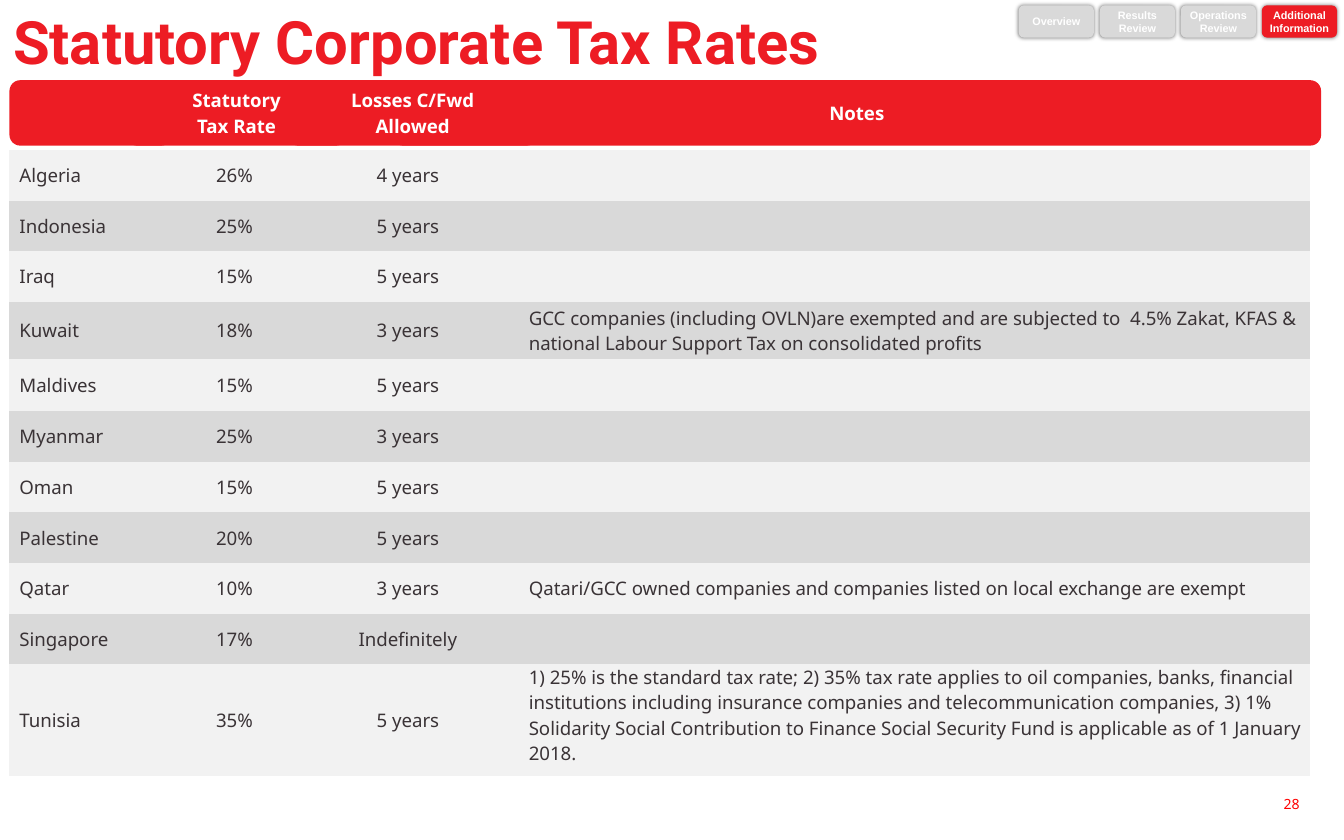
from dataclasses import dataclass
from typing import NamedTuple

import lxml.etree
import pptx
import pptx.dml.color
import pptx.enum.shapes
import pptx.enum.text
import pptx.oxml.ns
import pptx.util

RED = pptx.dml.color.RGBColor(0xED, 0x1C, 0x24)
PAGE_RED = pptx.dml.color.RGBColor(0xFF, 0x00, 0x00)
WHITE = pptx.dml.color.RGBColor(0xFF, 0xFF, 0xFF)
INK = pptx.dml.color.RGBColor(0x3A, 0x33, 0x36)
PALE = pptx.dml.color.RGBColor(0xF2, 0xF2, 0xF2)
GREY = pptx.dml.color.RGBColor(0xD9, 0xD9, 0xD9)
SHADOW = pptx.dml.color.RGBColor(0x80, 0x80, 0x80)

WIDTH = pptx.util.Inches(10)
HEIGHT = pptx.util.Inches(6.25)
GRID = 100
BODY_FONT = "Noto Sans"
PLAIN_STYLE = "{2D5ABB26-0587-4C30-8999-92F81FD0307C}"
ALIGN = pptx.enum.text.PP_ALIGN
ANCHOR = pptx.enum.text.MSO_ANCHOR

TABLE_COLUMNS = (12.1, 9.3, 16.5, 58.9)
TABLE_LEFT, TABLE_TOP = 0.7, 17.87
HEADER_TOP, HEADER_HEIGHT = 9.55, 7.8
TAB_LEFT, TAB_STEP = 75.8, 6.03


class Area(NamedTuple):
    """Position and size in hundredths of the slide's width and height."""

    left: float
    top: float
    width: float
    height: float


@dataclass(frozen=True)
class Country:
    """One row of the tax table."""

    name: str
    rate: str
    losses: str
    notes: str = ""
    rows: float = 6.03
    foot: float = 0


@dataclass(frozen=True)
class Heading:
    """One rounded block of the table header."""

    text: str
    left: float
    width: float


@dataclass(frozen=True)
class Tab:
    """One navigation button."""

    text: str
    fill: pptx.dml.color.RGBColor = GREY


COUNTRIES = (
    Country("Algeria", "26%", "4 years"),
    Country("Indonesia", "25%", "5 years"),
    Country("Iraq", "15%", "5 years"),
    Country("Kuwait", "18%", "3 years",
            "GCC companies (including OVLN)are exempted and are subjected to  4.5% Zakat, "
            "KFAS & national Labour Support Tax on consolidated profits", rows=6.8),
    Country("Maldives", "15%", "5 years", rows=6.2),
    Country("Myanmar", "25%", "3 years"),
    Country("Oman", "15%", "5 years"),
    Country("Palestine", "20%", "5 years"),
    Country("Qatar", "10%", "3 years",
            "Qatari/GCC owned companies and companies listed on local exchange are exempt"),
    Country("Singapore", "17%", "Indefinitely"),
    Country("Tunisia", "35%", "5 years",
            "1) 25% is the standard tax rate; 2) 35% tax rate applies to oil companies, banks, "
            "financial institutions including insurance companies and telecommunication "
            "companies, 3) 1% Solidarity Social Contribution to Finance Social Security Fund "
            "is applicable as of 1 January 2018.", rows=13.3, foot=1.25),
)
HEADINGS = (
    Heading("Notes", 29.2, 69.1),
    Heading("", 0.7, 12.1),
    Heading("Statutory\nTax Rate", 9.4, 16.4),
    Heading("Losses C/Fwd\nAllowed", 21.4, 18.6),
)
TABS = (
    Tab("Overview"),
    Tab("Results\nReview"),
    Tab("Operations\nReview"),
    Tab("Additional\nInformation", RED),
)


def across(columns: float) -> int:
    """Turn grid columns into a length."""
    return round(WIDTH * columns / GRID)


def down(rows: float) -> int:
    """Turn grid rows into a length."""
    return round(HEIGHT * rows / GRID)


def place(area: Area) -> tuple[int, int, int, int]:
    """Turn a grid area into left, top, width and height."""
    return across(area.left), down(area.top), across(area.width), down(area.height)


def write(frame, text: str, *, size: float = 10, font: str = BODY_FONT, color=INK,
          bold: bool = False, align=ALIGN.LEFT, spacing: float | None = None,
          gap: float = 0) -> None:
    """Fill a text frame with one paragraph per line of text."""
    for index, line in enumerate(text.split("\n")):
        para = frame.add_paragraph() if index else frame.paragraphs[0]
        para.alignment = align
        para.line_spacing = spacing
        if index and gap:
            para.space_before = pptx.util.Pt(gap)
        span = para.add_run()
        span.text = line
        span.font.size = pptx.util.Pt(size)
        span.font.name = font
        span.font.bold = bold
        span.font.color.rgb = color


def set_margins(target, side: float, top: float, bottom: float) -> None:
    """Set the inner margins of a cell or text frame."""
    target.margin_left = target.margin_right = across(side)
    target.margin_top, target.margin_bottom = down(top), down(bottom)


def add_text(page, area: Area, text: str, **style):
    """Add a wrapping text box and return its frame."""
    frame = page.shapes.add_textbox(*place(area)).text_frame
    frame.word_wrap = True
    write(frame, text, **style)
    return frame


def add_block(shapes, area: Area, fill):
    """Add a rounded block without outline or shadow."""
    block = shapes.add_shape(pptx.enum.shapes.MSO_SHAPE.ROUNDED_RECTANGLE, *place(area))
    block.shadow.inherit = False
    block.fill.solid()
    block.fill.fore_color.rgb = fill
    block.line.fill.background()
    block.text_frame.word_wrap = True
    block.text_frame.vertical_anchor = ANCHOR.MIDDLE
    return block


def add_glow(block) -> None:
    """Give a block a soft even shadow."""
    qn = pptx.oxml.ns.qn
    effects = block.element.spPr.find(qn("a:effectLst"))
    outer = lxml.etree.SubElement(effects, qn("a:outerShdw"), dist="0",
                                  blurRad=str(pptx.util.Pt(2)))
    lxml.etree.SubElement(outer, qn("a:srgbClr"), val=str(SHADOW))


def add_tax_table(page) -> None:
    """Add the country table with alternating row fills."""
    area = Area(TABLE_LEFT, TABLE_TOP, sum(TABLE_COLUMNS), sum(c.rows for c in COUNTRIES))
    holder = page.shapes.add_table(len(COUNTRIES), len(TABLE_COLUMNS), *place(area))
    next(holder.element.iter(pptx.oxml.ns.qn("a:tableStyleId"))).text = PLAIN_STYLE
    table = holder.table
    table.first_row = table.horz_banding = False
    for column, width in zip(table.columns, TABLE_COLUMNS):
        column.width = across(width)
    for index, (row, country) in enumerate(zip(table.rows, COUNTRIES)):
        row.height = down(country.rows)
        texts = (country.name, country.rate, country.losses, country.notes)
        for column, (cell, text) in enumerate(zip(row.cells, texts)):
            cell.fill.solid()
            cell.fill.fore_color.rgb = GREY if index % 2 else PALE
            cell.vertical_anchor = ANCHOR.MIDDLE
            set_margins(cell, 0.75, 0, country.foot if column == 3 else 0)
            write(cell.text_frame, text, align=ALIGN.CENTER if column in (1, 2) else ALIGN.LEFT)


def add_header(page) -> None:
    """Add the grouped blocks of the table header."""
    group = page.shapes.add_group_shape()
    for heading in HEADINGS:
        area = Area(heading.left, HEADER_TOP, heading.width, HEADER_HEIGHT)
        block = add_block(group.shapes, area, RED)
        if heading.text:
            write(block.text_frame, heading.text, color=WHITE, bold=True, align=ALIGN.CENTER,
                  gap=2)


def add_tabs(page) -> None:
    """Add the row of navigation buttons."""
    for index, tab in enumerate(TABS):
        block = add_block(page.shapes, Area(TAB_LEFT + index * TAB_STEP, 0.64, 5.6, 3.84), tab.fill)
        add_glow(block)
        set_margins(block.text_frame, 0.4, 0.8, 0.8)
        write(block.text_frame, tab.text, size=5.8, font="Arial", color=WHITE, bold=True,
              align=ALIGN.CENTER)


def main() -> None:
    """Build the slide and save the deck."""
    deck = pptx.Presentation()
    deck.slide_width, deck.slide_height = WIDTH, HEIGHT
    page = deck.slides.add_slide(deck.slide_layouts[6])
    number = add_text(page, Area(93.8, 94.72, 2.9, 3.2), "28", size=7.5, color=PAGE_RED,
                      align=ALIGN.RIGHT)
    set_margins(number, 0, 0, 0)
    title = add_text(page, Area(0, 1.5, 92.3, 8.48), "Statutory Corporate Tax Rates", size=32,
                     font="Roboto", color=RED, bold=True, spacing=0.9)
    title.vertical_anchor = ANCHOR.BOTTOM
    add_tax_table(page)
    add_header(page)
    add_tabs(page)
    deck.save("out.pptx")


if __name__ == "__main__":
    main()
